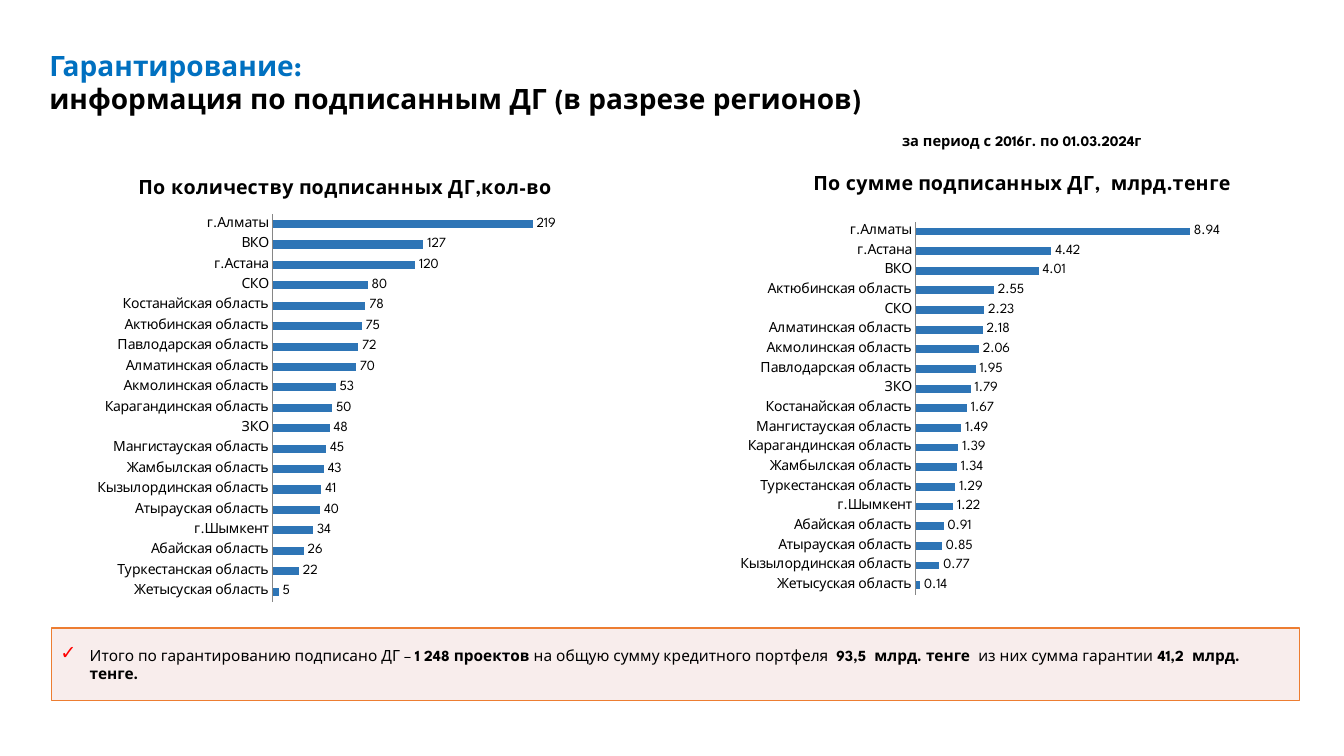
from lxml import etree
from pptx import Presentation
from pptx.chart.data import CategoryChartData
from pptx.dml.color import RGBColor
from pptx.enum import chart as ch, shapes, text
from pptx.oxml.ns import qn
from pptx.util import Inches, Pt

FONT = "League Spartan"
BLACK = RGBColor(0, 0, 0)
BLUE = RGBColor(0x00, 0x70, 0xC0)
BAR_BLUE = RGBColor(0x2E, 0x75, 0xB6)
ORANGE = RGBColor(0xED, 0x7D, 0x31)
PINK = RGBColor(0xF2, 0xDC, 0xDB)
RED = RGBColor(0xFF, 0, 0)
AXIS_GREY = RGBColor(0x86, 0x86, 0x86)

COUNTS = {
    "Жетысуская область": 5, "Туркестанская область": 22, "Абайская область": 26,
    "г.Шымкент": 34, "Атырауская область": 40, "Кызылординская область": 41,
    "Жамбылская область": 43, "Мангистауская область": 45, "ЗКО": 48,
    "Карагандинская область": 50, "Акмолинская область": 53,
    "Алматинская область": 70, "Павлодарская область": 72,
    "Актюбинская область": 75, "Костанайская область": 78, "СКО": 80,
    "г.Астана": 120, "ВКО": 127, "г.Алматы": 219,
}
SUMS = {
    "Жетысуская область": 0.14, "Кызылординская область": 0.77,
    "Атырауская область": 0.85, "Абайская область": 0.91, "г.Шымкент": 1.22,
    "Туркестанская область": 1.29, "Жамбылская область": 1.34,
    "Карагандинская область": 1.39, "Мангистауская область": 1.49,
    "Костанайская область": 1.67, "ЗКО": 1.79, "Павлодарская область": 1.95,
    "Акмолинская область": 2.06, "Алматинская область": 2.18, "СКО": 2.23,
    "Актюбинская область": 2.55, "ВКО": 4.01, "г.Астана": 4.42, "г.Алматы": 8.94,
}


def style_font(font, size, color=BLACK, bold=False):
    font.name = FONT
    font.size = Pt(size)
    font.bold = bold
    font.color.rgb = color


def add_run(paragraph, words, size, color=BLACK, bold=False):
    run = paragraph.add_run()
    run.text = words
    style_font(run.font, size, color, bold)


def add_text_box(slide, left, top, width, height, wrap):
    box = slide.shapes.add_textbox(*map(Inches, (left, top, width, height)))
    box.text_frame.word_wrap = wrap
    return box.text_frame.paragraphs[0]


def set_layout(parent, index, **fractions):
    """Place a chart part by fractions of the chart's size (x, y, w, h)."""
    for automatic in parent.findall(qn("c:layout")):
        parent.remove(automatic)
    layout = etree.Element(qn("c:layout"))
    parent.insert(index, layout)
    manual = etree.SubElement(layout, qn("c:manualLayout"))
    if "w" in fractions:
        etree.SubElement(manual, qn("c:layoutTarget"), val="inner")
    for side in "xy":
        etree.SubElement(manual, qn(f"c:{side}Mode"), val="edge")
    for side, fraction in fractions.items():
        etree.SubElement(manual, qn(f"c:{side}"), val=str(fraction))


def add_region_chart(slide, title, values, frame, plot, title_at, maximum, number_format):
    data = CategoryChartData(number_format=number_format)
    data.categories = list(values)
    data.add_series("Series 1", list(values.values()))
    chart = slide.shapes.add_chart(
        ch.XL_CHART_TYPE.BAR_CLUSTERED, *map(Inches, frame), data).chart
    style_font(chart.font, 10)
    chart.has_legend = False

    chart.has_title = True
    add_run(chart.chart_title.text_frame.paragraphs[0], title, 14, bold=True)
    chart.chart_title.include_in_layout = False
    set_layout(chart.chart_title._element, 1, **dict(zip("xy", title_at)))
    plot_area = chart._chartSpace.find(".//" + qn("c:plotArea"))
    set_layout(plot_area, 0, **dict(zip("xywh", plot)))

    regions = chart.category_axis
    regions.major_tick_mark = ch.XL_TICK_MARK.NONE
    regions.format.line.color.rgb = AXIS_GREY
    style_font(regions.tick_labels.font, 10)
    scale = chart.value_axis
    scale.visible = False
    scale.has_major_gridlines = False
    scale.minimum_scale, scale.maximum_scale = 0, maximum

    bars = chart.plots[0]
    bars.gap_width = 150
    bars.vary_by_categories = False
    fill = bars.series[0].format.fill
    fill.solid()
    fill.fore_color.rgb = BAR_BLUE
    bars.has_data_labels = True
    labels = bars.data_labels
    labels.show_value = True
    labels.position = ch.XL_LABEL_POSITION.OUTSIDE_END
    labels.number_format = number_format
    labels.number_format_is_linked = False
    style_font(labels.font, 10)


def add_check_bullet(paragraph):
    props = paragraph._p.get_or_add_pPr()
    props.set("marL", str(Inches(0.3)))
    props.set("indent", str(Inches(-0.29)))
    color = etree.SubElement(props, qn("a:buClr"))
    etree.SubElement(color, qn("a:srgbClr"), val=str(RED))
    etree.SubElement(props, qn("a:buSzPct"), val="125000")
    etree.SubElement(props, qn("a:buFont"), typeface=FONT)
    etree.SubElement(props, qn("a:buChar"), char="✓")


def add_summary(slide, phrases):
    """Draw the tinted total box; phrases alternate regular and bold."""
    panel = slide.shapes.add_shape(
        shapes.MSO_SHAPE.RECTANGLE, *map(Inches, (0.51, 6.23, 12.38, 0.72)))
    panel.shadow.inherit = False
    panel.fill.solid()
    panel.fill.fore_color.rgb = PINK
    tint = panel._element.spPr.find(".//" + qn("a:srgbClr"))
    etree.SubElement(tint, qn("a:alpha"), val="50000")
    panel.line.color.rgb = ORANGE
    panel.line.width = Pt(1)

    frame = panel.text_frame
    frame.word_wrap = True
    frame.vertical_anchor = text.MSO_ANCHOR.MIDDLE
    frame.margin_left = frame.margin_right = Inches(0.08)
    frame.margin_top = frame.margin_bottom = Inches(0.04)
    total = frame.paragraphs[0]
    total.alignment = text.PP_ALIGN.LEFT
    total.space_after = Pt(6)
    add_check_bullet(total)
    for position, phrase in enumerate(phrases):
        add_run(total, phrase, 11, bold=position % 2 == 1)


def main():
    deck = Presentation()
    deck.slide_width, deck.slide_height = Inches(13.33), Inches(7.5)
    slide = deck.slides.add_slide(deck.slide_layouts[6])

    heading = add_text_box(slide, 0.39, 0.43, 8.58, 0.77, wrap=True)
    add_run(heading, "Гарантирование: ", 20, BLUE, bold=True)
    heading.add_line_break()
    add_run(heading, "информация по подписанным ДГ (в разрезе регионов)", 20, bold=True)
    period = add_text_box(slide, 8.85, 1.26, 2.64, 0.28, wrap=False)
    add_run(period, "за период с 2016г. по 01.03.2024г", 10.5, bold=True)

    add_summary(slide, [
        "Итого по гарантированию подписано ДГ – ", "1 248 проектов ",
        "на общую сумму кредитного портфеля  ", "93,5  млрд. тенге  ",
        "из них сумма гарантии", " 41,2  млрд. тенге.",
    ])
    add_region_chart(
        slide, "По количеству подписанных ДГ,кол-во ", COUNTS,
        frame=(0.51, 1.6, 5.92, 4.54), plot=(0.371, 0.115, 0.497, 0.848),
        title_at=(0.14, 0.03), maximum=250, number_format="General")
    add_region_chart(
        slide, "По сумме подписанных ДГ,  млрд.тенге", SUMS,
        frame=(6.71, 1.51, 6.01, 4.63), plot=(0.395, 0.149, 0.506, 0.8),
        title_at=(0.22, 0.04), maximum=10, number_format="#,##0.00")
    deck.save("out.pptx")


if __name__ == "__main__":
    main()
